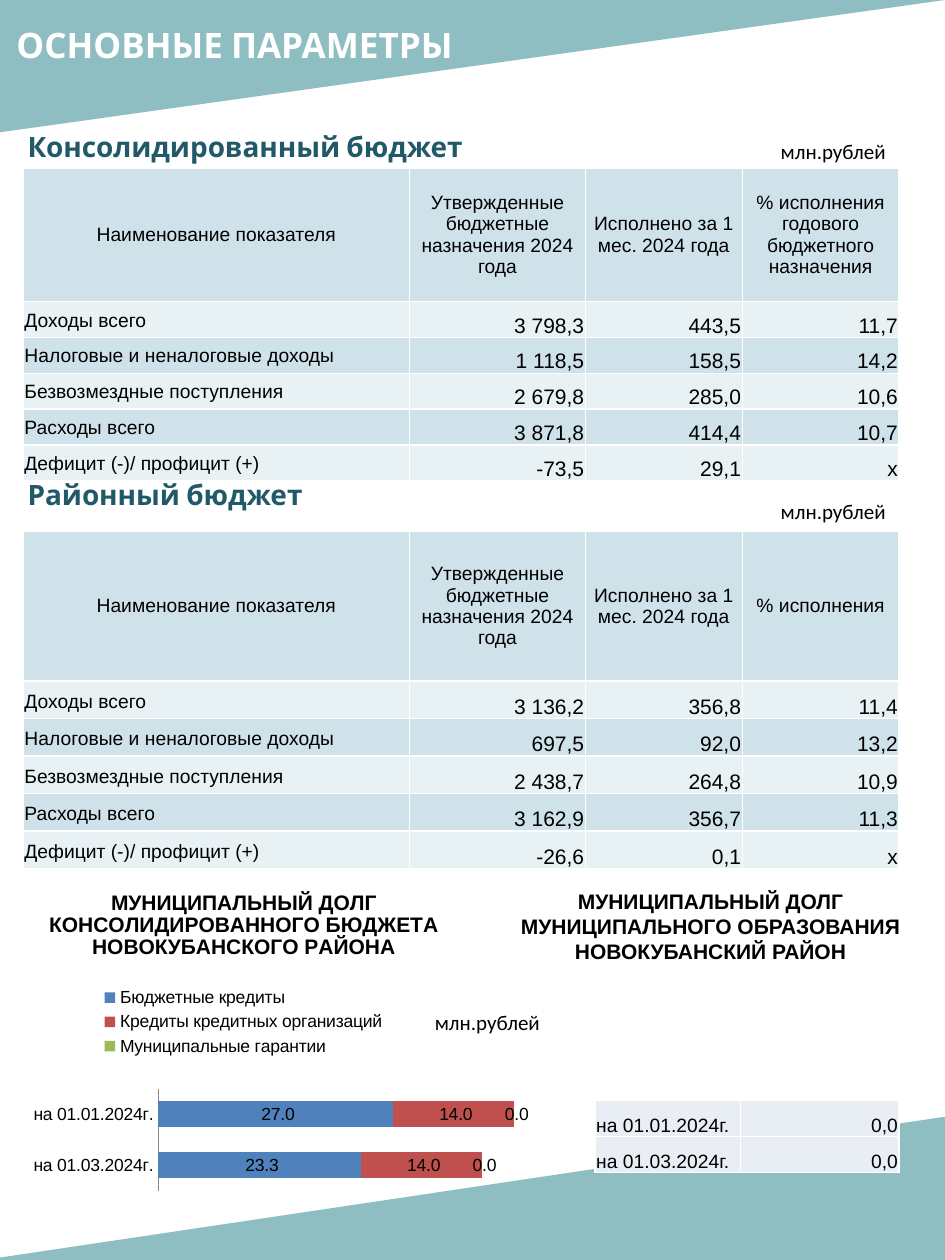
"""Build the slide with the main budget parameters and the municipal debt."""
from typing import Any, NamedTuple, Optional

from pptx import Presentation
from pptx.chart.data import CategoryChartData
from pptx.dml.color import RGBColor
from pptx.enum.chart import XL_CHART_TYPE as Chart, XL_LEGEND_POSITION as Legend, XL_TICK_MARK as Tick
from pptx.enum.shapes import MSO_SHAPE as Shape
from pptx.enum.text import MSO_ANCHOR as Anchor, MSO_AUTO_SIZE as Fit, PP_ALIGN as Align
from pptx.oxml import parse_xml
from pptx.oxml.ns import nsdecls, qn
from pptx.util import Inches, Pt

WHITE = RGBColor(0xFF, 0xFF, 0xFF)
BLACK = RGBColor(0, 0, 0)
TEAL = RGBColor(0x51, 0x9A, 0xA0)
DARK_TEAL = RGBColor(0x21, 0x59, 0x68)
BAND_DARK = RGBColor(0xCF, 0xE2, 0xEA)
BAND_LIGHT = RGBColor(0xE8, 0xF1, 0xF4)
PALE = RGBColor(0xE9, 0xED, 0xF4)
AXIS_GREY = RGBColor(0x86, 0x86, 0x86)
BLUE = RGBColor(0x4F, 0x81, 0xBD)
RED = RGBColor(0xC0, 0x50, 0x4D)
GREEN = RGBColor(0x9B, 0xBB, 0x59)

TITLE_FONT = {"name": "Cabin", "size": Pt(20), "bold": True, "color": WHITE}
HEADING_FONT = TITLE_FONT | {"size": Pt(16), "color": DARK_TEAL}
UNIT_FONT = {"name": "Calibri", "size": Pt(12), "color": BLACK}
NUMBER_FONT = {"name": "Arial", "size": Pt(12), "color": BLACK}
CELL_FONT = NUMBER_FONT | {"size": Pt(11)}
DEBT_FONT = NUMBER_FONT | {"bold": True}
CHART_FONT = NUMBER_FONT | {"size": Pt(10)}

WIDE_PAD = (0.01, 0.05, 0.01, 0.05)
TIGHT_PAD = (0.01, 0.01, 0.01, 0)
NUMBER_FORMAT = r"#\ ##0.0"
UNIT = "млн.рублей"
DATES = ("на 01.01.2024г.", "на 01.03.2024г.")
INDICATORS = ("Доходы всего", "Налоговые и неналоговые доходы", "Безвозмездные поступления",
              "Расходы всего", "Дефицит (-)/ профицит (+)")
HEADER = ("Наименование показателя", "Утвержденные бюджетные назначения 2024 года",
          "Исполнено за 1 мес. 2024 года")


class Box(NamedTuple):
    """Left, top, width and height in hundredths of the slide."""
    x: float
    y: float
    w: float
    h: float


class Label(NamedTuple):
    text: str
    box: Box
    font: dict
    align: Optional[Align] = None
    wrap: bool = True


class Budget(NamedTuple):
    box: Box
    head: float
    last_header: str
    values: tuple


class Debt(NamedTuple):
    name: str
    values: tuple
    color: RGBColor


LABELS = (
    Label("Консолидированный бюджет", Box(1.6, 9.8, 65, 3.6), HEADING_FONT),
    Label("Районный бюджет", Box(1.6, 37.4, 65, 3.6), HEADING_FONT),
    *(Label(UNIT, Box(x, y, 14.4, 3), UNIT_FONT, wrap=False)
      for x, y in ((81.3, 10.5), (81.3, 39.1), (44.7, 79.6))),
    Label("МУНИЦИПАЛЬНЫЙ ДОЛГ МУНИЦИПАЛЬНОГО ОБРАЗОВАНИЯ НОВОКУБАНСКИЙ РАЙОН",
          Box(50.4, 70, 49.6, 7.1), DEBT_FONT, Align.CENTER),
)
BUDGETS = (
    Budget(Box(2.45, 13.35, 92.7, 24.7), 10.6, "% исполнения годового бюджетного назначения",
           (("3 798,3", "443,5", "11,7"), ("1 118,5", "158,5", "14,2"), ("2 679,8", "285,0", "10,6"),
            ("3 871,8", "414,4", "10,7"), ("-73,5", "29,1", "х"))),
    Budget(Box(2.45, 42.15, 92.7, 26.8), 11.9, "% исполнения",
           (("3 136,2", "356,8", "11,4"), ("697,5", "92,0", "13,2"), ("2 438,7", "264,8", "10,9"),
            ("3 162,9", "356,7", "11,3"), ("-26,6", "0,1", "х"))),
)
DEBTS = (
    Debt("Бюджетные кредиты", (27, 23.3), BLUE),
    Debt("Кредиты кредитных организаций", (14, 14), RED),
    Debt("Муниципальные гарантии", (0, 0), GREEN),
)

prs = Presentation()
prs.slide_width, prs.slide_height = Inches(7.5), Inches(10)


def across(share: float) -> int:
    return round(prs.slide_width * share / 100)


def down(share: float) -> int:
    return round(prs.slide_height * share / 100)


def place(box: Box) -> tuple:
    return across(box.x), down(box.y), across(box.w), down(box.h)


def apply(target: Any, values: dict) -> None:
    for key, value in values.items():
        if key == "color":
            target.color.rgb = value
        else:
            setattr(target, key, value)


def write(tf: Any, text: str, font: dict, align: Optional[Align] = None) -> None:
    p = tf.paragraphs[0]
    p.alignment = align
    r = p.add_run()
    r.text = text
    apply(r.font, font)


def add_corner(shapes: Any, box: Box, flip: str) -> None:
    sp = shapes.add_shape(Shape.RIGHT_TRIANGLE, *place(box))
    sp.shadow.inherit = False
    sp.rotation = 180
    sp.element.spPr.find(qn("a:xfrm")).set(flip, "1")
    sp.fill.solid()
    sp.fill.fore_color.rgb = TEAL
    color = sp.element.spPr.find(qn("a:solidFill"))[0]
    color.append(parse_xml(f'<a:alpha {nsdecls("a")} val="64000"/>'))
    sp.line.fill.background()


def add_label(shapes: Any, label: Label) -> None:
    tf = shapes.add_textbox(*place(label.box)).text_frame
    apply(tf, {"word_wrap": label.wrap, "auto_size": Fit.SHAPE_TO_FIT_TEXT})
    write(tf, label.text, label.font, label.align)


def fill_cell(cell: Any, text: str, font: dict, align: Align, fill: RGBColor, pad: tuple, anchor: Anchor) -> None:
    apply(cell, dict(zip(("margin_left", "margin_top", "margin_right", "margin_bottom"), map(Inches, pad))))
    cell.vertical_anchor = anchor
    write(cell.text_frame, text, font, align)
    tc_pr = cell._tc.get_or_add_tcPr()
    for side in "LRTB":
        tc_pr.append(parse_xml(f'<a:ln{side} {nsdecls("a")} w="12700"><a:solidFill>'
                               f'<a:srgbClr val="{WHITE}"/></a:solidFill></a:ln{side}>'))
    cell.fill.solid()
    cell.fill.fore_color.rgb = fill


def add_grid(shapes: Any, box: Box, cols: tuple, rows: tuple) -> Any:
    table = shapes.add_table(len(rows), len(cols), *place(box)).table
    apply(table, {"first_row": False, "horz_banding": False})
    for col, share in zip(table.columns, cols):
        col.width = across(share)
    for row, share in zip(table.rows, rows):
        row.height = down(share)
    return table


def add_budget(shapes: Any, budget: Budget) -> None:
    n = len(INDICATORS)
    rows = (budget.head, *[(budget.box.h - budget.head) / n] * n)
    table = add_grid(shapes, budget.box, (40.9, 18.6, 16.6, 16.6), rows)
    for c, text in enumerate((*HEADER, budget.last_header)):
        fill_cell(table.cell(0, c), text, CELL_FONT, Align.CENTER, BAND_DARK, WIDE_PAD, Anchor.MIDDLE)
    for i, (name, values) in enumerate(zip(INDICATORS, budget.values), 1):
        band = BAND_LIGHT if i % 2 else BAND_DARK
        fill_cell(table.cell(i, 0), name, CELL_FONT, Align.LEFT, band, WIDE_PAD, Anchor.BOTTOM)
        for c, value in enumerate(values, 1):
            fill_cell(table.cell(i, c), value, NUMBER_FONT, Align.RIGHT, band, TIGHT_PAD, Anchor.BOTTOM)


def add_debt_table(shapes: Any) -> None:
    table = add_grid(shapes, Box(62.95, 87.35, 32.2, 5.7), (15.4, 16.8), (2.85, 2.85))
    for i, date in enumerate(DATES):
        for c, (text, align) in enumerate(((date, Align.LEFT), ("0,0", Align.RIGHT))):
            fill_cell(table.cell(i, c), text, CELL_FONT, align, PALE, TIGHT_PAD, Anchor.BOTTOM)


def set_layout(parent: Any, before: str, target: str = "", **shares: float) -> None:
    for old in parent.findall(qn("c:layout")):
        parent.remove(old)
    modes = "".join(f'<c:{k}Mode val="edge"/>' for k in "xy")
    sizes = "".join(f'<c:{k} val="{v}"/>' for k, v in shares.items())
    layout = parse_xml(f'<c:layout {nsdecls("c")}><c:manualLayout>{target}{modes}{sizes}'
                       '</c:manualLayout></c:layout>')
    parent.find(qn(before)).addprevious(layout)


def add_debt_chart(shapes: Any) -> None:
    data = CategoryChartData(number_format=NUMBER_FORMAT)
    data.categories = DATES
    for debt in DEBTS:
        data.add_series(debt.name, debt.values)
    chart = shapes.add_chart(Chart.BAR_STACKED, *place(Box(0, 67.7, 59.9, 32.3)), data).chart
    apply(chart.font, CHART_FONT)
    apply(chart, {"has_title": True, "has_legend": True})
    write(chart.chart_title.text_frame,
          "МУНИЦИПАЛЬНЫЙ ДОЛГ КОНСОЛИДИРОВАННОГО БЮДЖЕТА НОВОКУБАНСКОГО РАЙОНА", DEBT_FONT)
    apply(chart.legend, {"position": Legend.TOP, "include_in_layout": False})
    apply(chart.category_axis, {"reverse_order": True, "major_tick_mark": Tick.NONE})
    chart.category_axis.format.line.color.rgb = AXIS_GREY
    apply(chart.value_axis, {"visible": False, "has_major_gridlines": False})
    plot = chart.plots[0]
    apply(plot, {"gap_width": 95, "overlap": 100, "vary_by_categories": False})
    for series, debt in zip(plot.series, DEBTS):
        series.format.fill.solid()
        series.format.fill.fore_color.rgb = debt.color
        apply(series.data_labels, {"show_value": True, "number_format": NUMBER_FORMAT,
                                   "number_format_is_linked": False})
    set_layout(chart.chart_title._element, "c:overlay", x=0.08, y=0.08)
    set_layout(chart.legend._element, "c:overlay", x=0.08, y=0.32, w=0.7, h=0.19)
    set_layout(plot._element.getparent(), "c:barChart", '<c:layoutTarget val="inner"/>',
               x=0.28, y=0.58, w=0.69, h=0.25)


def main() -> None:
    s = prs.slides.add_slide(prs.slide_layouts[5])
    title = s.shapes.title
    add_corner(s.shapes, Box(0, 0, 100, 10.5), "flipH")
    add_corner(s.shapes, Box(-1.7, 88.6, 102, 11.4), "flipV")
    s.shapes._spTree.append(title.element)
    apply(title, dict(zip(("left", "top", "width", "height"), place(Box(0.4, 1.4, 65, 4.3)))))
    apply(title.text_frame, {"vertical_anchor": Anchor.TOP, "auto_size": Fit.SHAPE_TO_FIT_TEXT})
    write(title.text_frame, "ОСНОВНЫЕ ПАРАМЕТРЫ", TITLE_FONT, Align.LEFT)
    for label in LABELS:
        add_label(s.shapes, label)
    for budget in BUDGETS:
        add_budget(s.shapes, budget)
    add_debt_table(s.shapes)
    add_debt_chart(s.shapes)
    prs.save("out.pptx")


if __name__ == "__main__":
    main()
